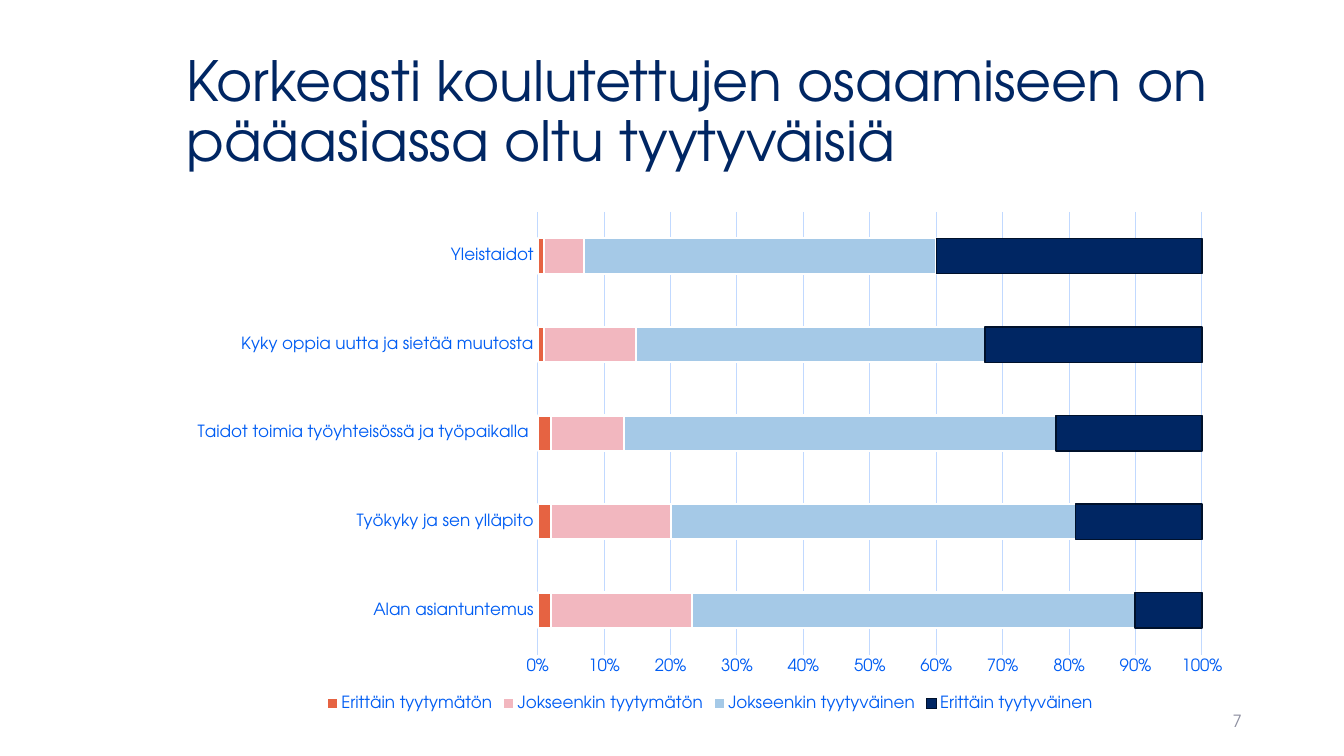
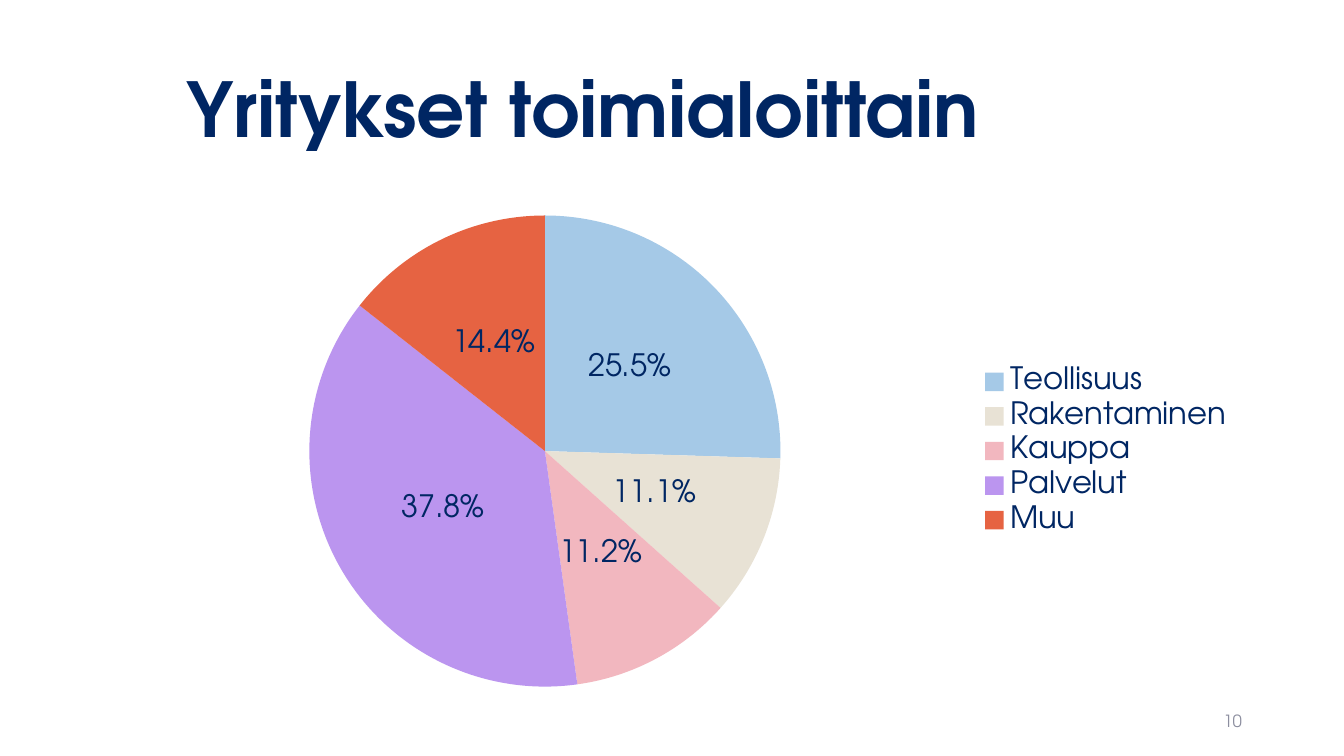
from pptx import Presentation
from pptx.chart.data import CategoryChartData
from pptx.dml.color import RGBColor
from pptx.enum import chart as ec, text as et
from pptx.util import Pt

FONT = "TeX Gyre Adventor"
NAVY, BLUE, GRID, GREY, WHITE = "002663", "005DF3", "C1D9FF", "8C8E9F", "FFFFFF"
ORANGE, PINK, SKY, SAND, VIOLET = "E66342", "F2B7BF", "A5C9E7", "E8E2D5", "BB95EF"
DARK_EDGE = "00112B"

TITLE_BOX = (126, 28.8, 762.5, 104.4)
NUMBER_BOX = (678.25, 500.4, 216, 28.8)
BAR_BOX = (126, 144, 762.5, 367.2)
PIE_BOX = (82, 144, 807, 356.4)

SKILLS = [
    "Alan asiantuntemus",
    "Työkyky ja sen ylläpito",
    "Taidot toimia työyhteisössä ja työpaikalla ",
    "Kyky oppia uutta ja sietää muutosta",
    "Yleistaidot",
]
RATINGS = [
    ("Erittäin tyytymätön", (2, 2, 2, 1, 1), ORANGE, WHITE, 1.5),
    ("Jokseenkin tyytymätön", (21, 18, 11, 14, 6), PINK, WHITE, 1.5),
    ("Jokseenkin tyytyväinen", (66, 61, 65, 53, 53), SKY, WHITE, 1.5),
    ("Erittäin tyytyväinen", (10, 19, 22, 33, 40), NAVY, DARK_EDGE, 1),
]
INDUSTRIES = [
    ("Teollisuus", 0.255, SKY),
    ("Rakentaminen", 0.111, SAND),
    ("Kauppa", 0.112, PINK),
    ("Palvelut", 0.378, VIOLET),
    ("Muu", 0.144, ORANGE),
]


def rgb(value):
    return RGBColor.from_string(value)


def style_font(font, size, color, bold=False):
    font.name, font.size, font.bold = FONT, Pt(size), bold
    font.color.rgb = rgb(color)


def style_fill(fmt, color):
    fmt.fill.solid()
    fmt.fill.fore_color.rgb = rgb(color)


def style_line(line, color, width):
    line.color.rgb = rgb(color)
    line.width = Pt(width)


def add_text(s, box, text, size, color, bold=False, align=et.PP_ALIGN.LEFT, spacing=1.0):
    tf = s.shapes.add_textbox(*map(Pt, box)).text_frame
    tf.word_wrap = True
    tf.vertical_anchor = et.MSO_ANCHOR.MIDDLE
    p = tf.paragraphs[0]
    p.text = text
    p.alignment, p.line_spacing = align, spacing
    style_font(p.runs[0].font, size, color, bold)


def add_slide(prs, title, size, number, bold=False):
    s = prs.slides.add_slide(prs.slide_layouts[6])
    add_text(s, TITLE_BOX, title, size, NAVY, bold, spacing=0.9)
    add_text(s, NUMBER_BOX, number, 12, GREY, align=et.PP_ALIGN.RIGHT)
    return s


def add_chart(s, box, kind, categories, series, legend_at, size, color):
    data = CategoryChartData()
    data.categories = categories
    for name, values in series:
        data.add_series(name, values)
    chart = s.shapes.add_chart(kind, *map(Pt, box), data).chart
    chart.has_title = False
    style_font(chart.font, size, color)
    chart.has_legend = True
    chart.legend.position = legend_at
    chart.legend.include_in_layout = False
    style_font(chart.legend.font, size, color)
    return chart


def add_rating_bars(s, box):
    chart = add_chart(s, box, ec.XL_CHART_TYPE.BAR_STACKED_100, SKILLS,
                      [rating[:2] for rating in RATINGS],
                      ec.XL_LEGEND_POSITION.BOTTOM, 12, BLUE)
    plot = chart.plots[0]
    plot.gap_width, plot.overlap = 150, 100
    plot.vary_by_categories = False
    for series, (_, _, color, edge, width) in zip(plot.series, RATINGS):
        style_fill(series.format, color)
        style_line(series.format.line, edge, width)
    for axis in (chart.category_axis, chart.value_axis):
        axis.major_tick_mark = axis.minor_tick_mark = ec.XL_TICK_MARK.NONE
        style_font(axis.tick_labels.font, 12, BLUE)
    style_line(chart.category_axis.format.line, GRID, 0.75)
    values = chart.value_axis
    values.format.line.fill.background()
    values.has_major_gridlines = True
    style_line(values.major_gridlines.format.line, GRID, 0.75)
    values.tick_labels.number_format = "0%"
    values.tick_labels.number_format_is_linked = False


def add_industry_pie(s, box):
    names, shares, colors = zip(*INDUSTRIES)
    chart = add_chart(s, box, ec.XL_CHART_TYPE.PIE, names, [("Series 1", shares)],
                      ec.XL_LEGEND_POSITION.RIGHT, 22, NAVY)
    plot = chart.plots[0]
    plot.vary_by_categories = True
    series = plot.series[0]
    for i, color in enumerate(colors):
        fmt = series.points[i].format
        style_fill(fmt, color)
        fmt.line.fill.background()
    labels = series.data_labels
    labels.show_value = True
    labels.show_percentage = False
    labels.number_format = "0.0%"
    labels.number_format_is_linked = False
    labels.position = ec.XL_LABEL_POSITION.CENTER
    style_font(labels.font, 22, NAVY)


def main():
    prs = Presentation()
    prs.slide_width, prs.slide_height = Pt(960), Pt(540)
    s = add_slide(prs, "Korkeasti koulutettujen osaamiseen on pääasiassa oltu tyytyväisiä", 39.6, "7")
    add_rating_bars(s, BAR_BOX)
    s = add_slide(prs, "Yritykset toimialoittain", 54, "10", bold=True)
    add_industry_pie(s, PIE_BOX)
    prs.save("out.pptx")


if __name__ == "__main__":
    main()
